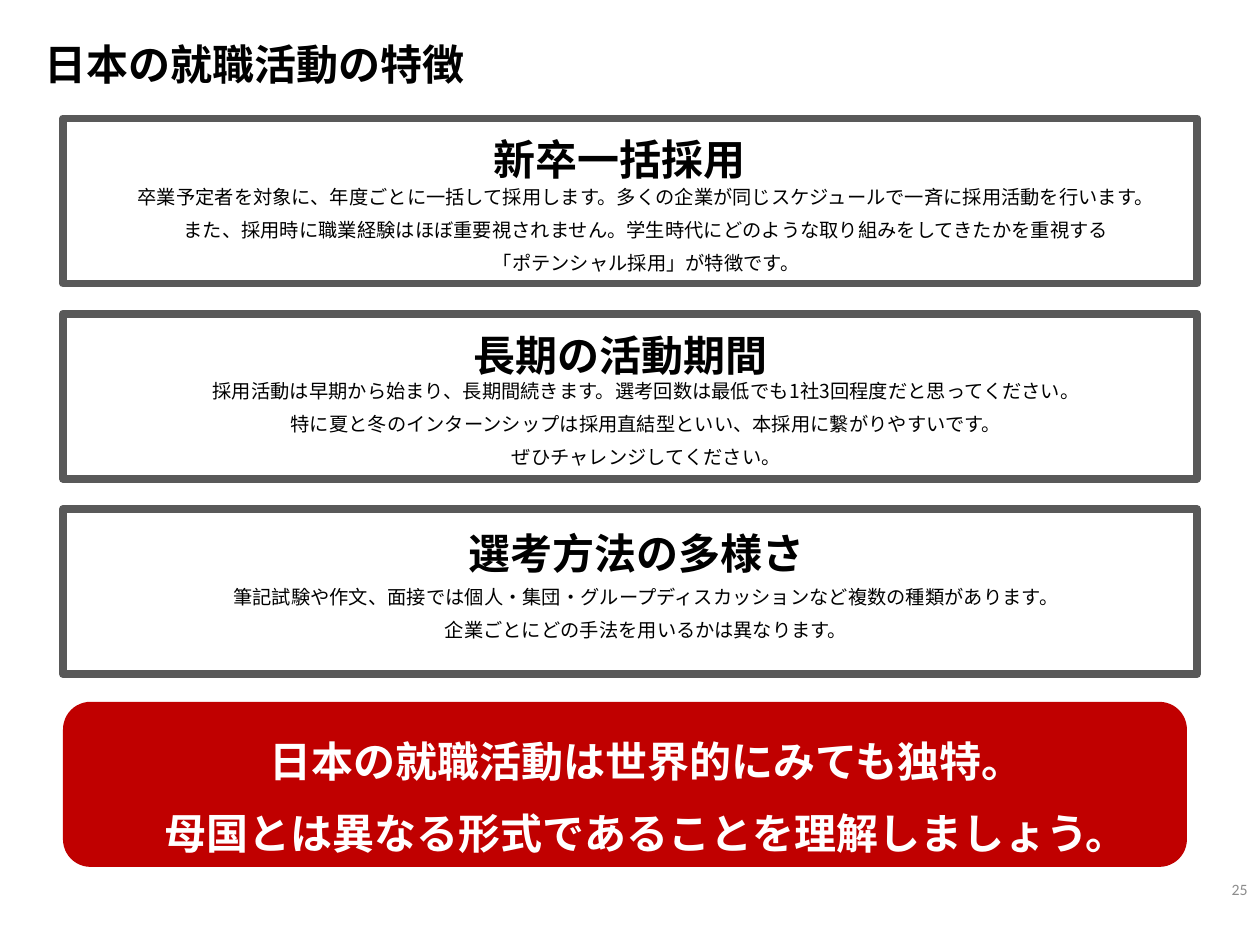
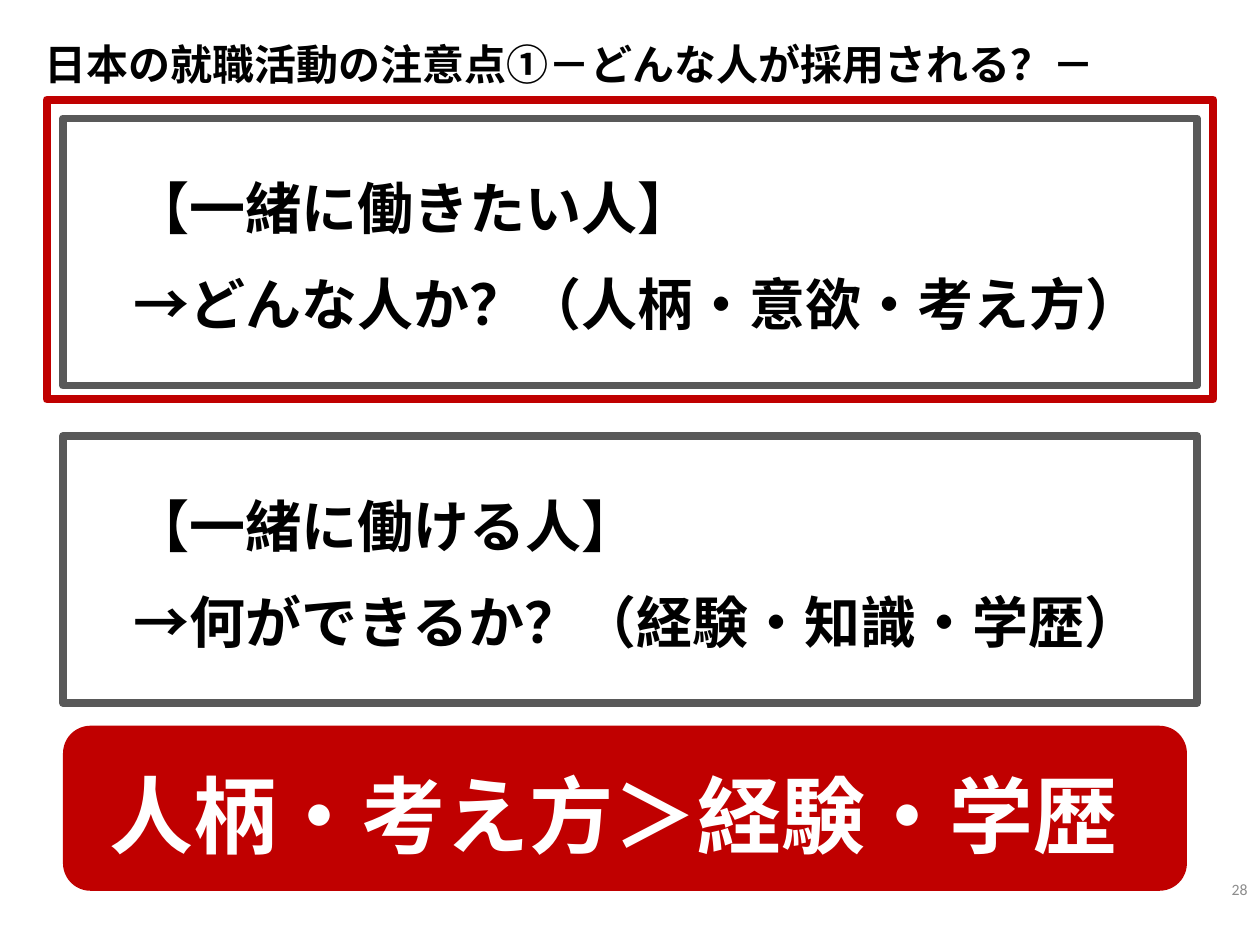
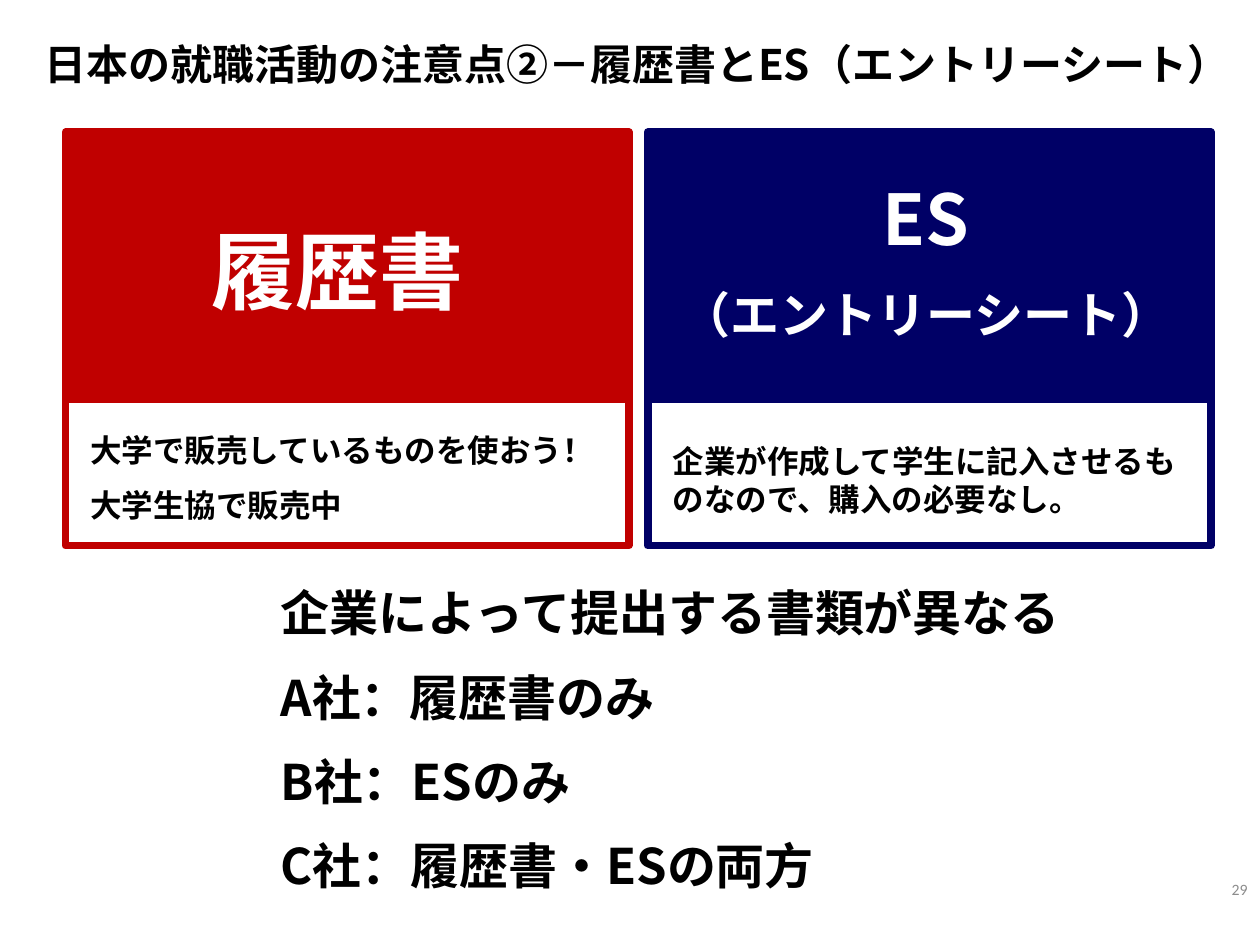
from dataclasses import dataclass
from typing import Optional

from lxml.etree import SubElement
from pptx import Presentation
from pptx.dml.color import RGBColor
from pptx.enum.shapes import MSO_SHAPE
from pptx.enum.text import MSO_ANCHOR, MSO_AUTO_SIZE, PP_ALIGN
from pptx.oxml.ns import qn
from pptx.presentation import Presentation as Deck
from pptx.slide import Slide
from pptx.text.text import TextFrame
from pptx.util import Inches, Pt

BLACK = RGBColor(0x00, 0x00, 0x00)
WHITE = RGBColor(0xFF, 0xFF, 0xFF)
GRAY = RGBColor(0x59, 0x59, 0x59)
NUMBER_GRAY = RGBColor(0x8C, 0x8C, 0x8C)
RED = RGBColor(0xC0, 0x00, 0x00)
NAVY = RGBColor(0x00, 0x00, 0x66)

BODY_FONT = "Noto Sans CJK JP"
NUMBER_FONT = "Calibri"
LINE_HEIGHT = 1.22
PARAGRAPH_GAP = 0.5
TITLE_SIZE = 24
FRAME_WIDTH = 4.5
PANEL_LEFT, PANEL_TOP, PANEL_WIDTH = 0.5, 0.94, 9
CENTERED_WIDTH = 10.26


@dataclass(frozen=True)
class Box:
    """Position and size in inches."""

    left: float
    top: float
    width: float
    height: float

    def lengths(self) -> tuple:
        """Return the four values as lengths."""
        return tuple(map(Inches, (self.left, self.top, self.width, self.height)))


@dataclass(frozen=True)
class Feature:
    """A framed feature with a heading and centred details."""

    heading: str
    heading_left: float
    heading_top: float
    details: str
    details_top: float
    details_height: float


@dataclass(frozen=True)
class Document:
    """A document card with a coloured head and a framed note."""

    color: RGBColor
    left: float
    name: str
    name_box: Box
    name_sizes: tuple[int, ...]
    centered: bool
    note: str
    note_top: float
    note_height: float


FEATURES = (
    Feature(
        "新卒一括採用", 3.82, 1.0,
        "卒業予定者を対象に、年度ごとに一括して採用します。多くの企業が同じスケジュールで一斉に採用活動を行います。\n"
        "また、採用時に職業経験はほぼ重要視されません。学生時代にどのような取り組みをしてきたかを重視する\n"
        "「ポテンシャル採用」が特徴です。",
        1.42, 0.84,
    ),
    Feature(
        "長期の活動期間", 3.66, 2.56,
        "採用活動は早期から始まり、長期間続きます。選考回数は最低でも1社3回程度だと思ってください。\n"
        "特に夏と冬のインターンシップは採用直結型といい、本採用に繋がりやすいです。\n"
        "ぜひチャレンジしてください。",
        2.96, 0.84,
    ),
    Feature(
        "選考方法の多様さ", 3.62, 4.13,
        "筆記試験や作文、面接では個人・集団・グループディスカッションなど複数の種類があります。\n"
        "企業ごとにどの手法を用いるかは異なります。",
        4.59, 0.56,
    ),
)

PERSON_TYPES = (
    "【一緒に働きたい人】\n→どんな人か？（人柄・意欲・考え方）",
    "【一緒に働ける人】\n→何ができるか？（経験・知識・学歴）",
)

DOCUMENTS = (
    Document(
        RED, 0.52, "履歴書", Box(1.58, 1.68, 2.64, 0.91), (48,), False,
        "大学で販売しているものを使おう！\n大学生協で販売中", 3.37, 0.86,
    ),
    Document(
        NAVY, 5.14, "ES\n（エントリーシート）", Box(5.2, 1.33, 4.3, 1.48), (40, 28), True,
        "企業が作成して学生に記入させるものなので、購入の必要なし。", 3.45, 0.71,
    ),
)


def write_text(
    frame: TextFrame,
    text: str,
    *,
    sizes: tuple[int, ...],
    color: RGBColor = BLACK,
    bold: bool = True,
    font_name: str = BODY_FONT,
    alignment: PP_ALIGN = PP_ALIGN.LEFT,
    anchor: MSO_ANCHOR = MSO_ANCHOR.TOP,
) -> None:
    """Fill a frame with one paragraph a line; the last size carries on."""
    frame.word_wrap = True
    frame.auto_size = MSO_AUTO_SIZE.NONE
    frame.vertical_anchor = anchor
    for index, line in enumerate(text.split("\n")):
        size = sizes[min(index, len(sizes) - 1)]
        paragraph = frame.add_paragraph() if index else frame.paragraphs[0]
        paragraph.alignment = alignment
        paragraph.line_spacing = Pt(size * LINE_HEIGHT)
        paragraph.space_before = Pt(size * PARAGRAPH_GAP if index else 0)
        run = paragraph.add_run()
        run.text = line
        run.font.size = Pt(size)
        run.font.bold = bold
        run.font.name = font_name
        run.font.color.rgb = color
        east_asian = SubElement(run.font._element, qn("a:ea"))
        east_asian.set("typeface", font_name)


def add_text(slide: Slide, box: Box, text: str, **text_format) -> None:
    """Add a text box with formatted text."""
    write_text(slide.shapes.add_textbox(*box.lengths()).text_frame, text, **text_format)


def add_panel(
    slide: Slide,
    box: Box,
    *,
    line: Optional[RGBColor] = None,
    fill: Optional[RGBColor] = None,
    outline: MSO_SHAPE = MSO_SHAPE.RECTANGLE,
) -> None:
    """Add a filled or framed shape."""
    shape = slide.shapes.add_shape(outline, *box.lengths())
    shape.shadow.inherit = False
    if fill is None:
        shape.fill.background()
    else:
        shape.fill.solid()
        shape.fill.fore_color.rgb = fill
    if line is None:
        shape.line.fill.background()
    else:
        shape.line.color.rgb = line
        shape.line.width = Pt(FRAME_WIDTH)


def add_slide(presentation: Deck, title: str, number: int, title_width: float = 8.58) -> Slide:
    """Add a slide with its title and page number."""
    slide = presentation.slides.add_slide(presentation.slide_layouts[5])
    placeholder = slide.shapes.title
    placeholder.left, placeholder.top, placeholder.width, placeholder.height = Box(
        0.25, 0.25, title_width, 0.5
    ).lengths()
    write_text(placeholder.text_frame, title, sizes=(TITLE_SIZE,))
    add_text(
        slide, Box(7.67, 6.86, 2.33, 0.4), str(number), sizes=(9,), color=NUMBER_GRAY,
        bold=False, font_name=NUMBER_FONT, alignment=PP_ALIGN.RIGHT, anchor=MSO_ANCHOR.MIDDLE,
    )
    return slide


def add_conclusion(slide: Slide, top: float, text: str, text_box: Box, size: int) -> None:
    """Add the red rounded band with its white message."""
    add_panel(
        slide, Box(PANEL_LEFT, top, 8.92, 1.31), fill=RED, outline=MSO_SHAPE.ROUNDED_RECTANGLE
    )
    add_text(slide, text_box, text, sizes=(size,), color=WHITE, alignment=PP_ALIGN.CENTER)


def build_features(presentation: Deck) -> None:
    """Build the slide on the features of job hunting."""
    slide = add_slide(presentation, "日本の就職活動の特徴", 25)
    for index, feature in enumerate(FEATURES):
        top = PANEL_TOP + 1.55 * index
        add_panel(slide, Box(PANEL_LEFT, top, PANEL_WIDTH, 1.31), line=GRAY)
        add_text(
            slide, Box(feature.heading_left, feature.heading_top, 5.18, 0.5),
            feature.heading, sizes=(TITLE_SIZE,),
        )
        add_text(
            slide, Box(0, feature.details_top, CENTERED_WIDTH, feature.details_height),
            feature.details, sizes=(11,), bold=False, alignment=PP_ALIGN.CENTER,
        )
    add_conclusion(
        slide, 5.57,
        "日本の就職活動は世界的にみても独特。\n母国とは異なる形式であることを理解しましょう。",
        Box(0, 5.78, CENTERED_WIDTH, 1.11), 24,
    )


def build_person_types(presentation: Deck) -> None:
    """Build the slide on who gets hired."""
    slide = add_slide(presentation, "日本の就職活動の注意点①－どんな人が採用される？－", 28)
    for index, text in enumerate(PERSON_TYPES):
        offset = 2.52 * index
        add_panel(slide, Box(PANEL_LEFT, PANEL_TOP + offset, PANEL_WIDTH, 2.12), line=GRAY)
        add_text(slide, Box(0.96, 1.32 + offset, 8.33, 1.45), text, sizes=(32,))
    add_panel(slide, Box(0.37, 0.79, 9.26, 2.38), line=RED)
    add_conclusion(
        slide, 5.76, "人柄・考え方＞経験・学歴", Box(-0.26, 6, CENTERED_WIDTH, 0.91), 48
    )


def build_documents(presentation: Deck) -> None:
    """Build the slide on the two application documents."""
    slide = add_slide(
        presentation, "日本の就職活動の注意点②－履歴書とES（エントリーシート）", 29, 10.1
    )
    for document in DOCUMENTS:
        color = document.color
        add_panel(slide, Box(document.left, 1.05, 4.47, 2.12), line=color, fill=color)
        add_panel(slide, Box(document.left, 3.17, 4.47, 1.16), line=color)
        add_text(
            slide, document.name_box, document.name, sizes=document.name_sizes, color=WHITE,
            alignment=PP_ALIGN.CENTER if document.centered else PP_ALIGN.LEFT,
        )
        add_text(
            slide, Box(document.left + 0.1, document.note_top, 4.27, document.note_height),
            document.note, sizes=(18,),
        )
    add_text(
        slide, Box(2.13, 4.57, 10.1, 2.69),
        "企業によって提出する書類が異なる\nA社：履歴書のみ\nB社：ESのみ\nC社：履歴書・ESの両方",
        sizes=(28,),
    )


def main() -> None:
    """Build and save the presentation."""
    presentation = Presentation()
    presentation.slide_width = Inches(10)
    presentation.slide_height = Inches(7.5)
    build_features(presentation)
    build_person_types(presentation)
    build_documents(presentation)
    presentation.save("out.pptx")


if __name__ == "__main__":
    main()
